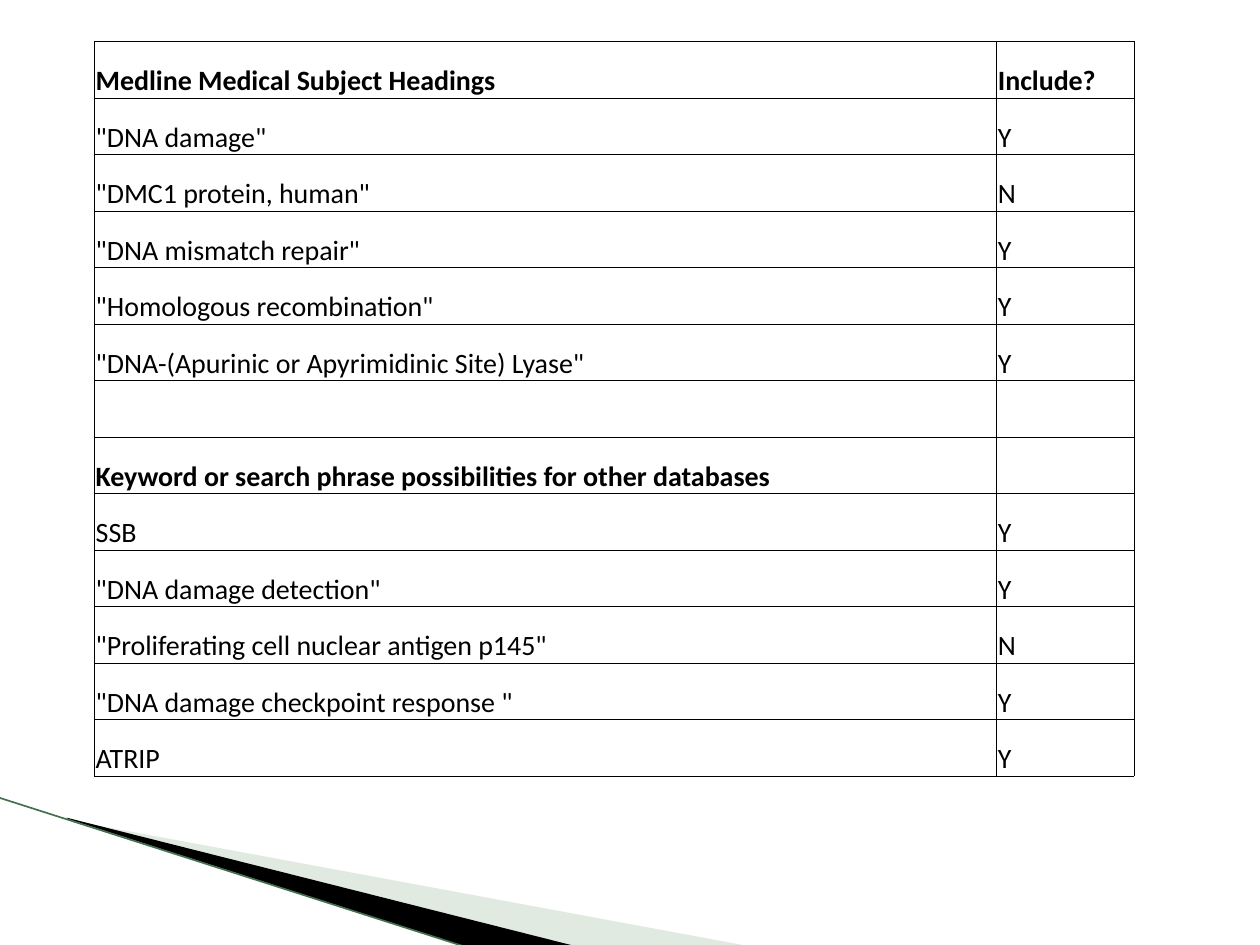
import pptx
import pptx.dml.color
import pptx.enum.shapes
import pptx.enum.text
import pptx.oxml
import pptx.oxml.ns
import pptx.util
from pptx.util import Inches

BLACK = pptx.dml.color.RGBColor(0x00, 0x00, 0x00)
PALE_GREEN = pptx.dml.color.RGBColor(0xB3, 0xCB, 0xB5)
DARK_GREEN = pptx.dml.color.RGBColor(0x44, 0x70, 0x4F)

ROW_HEIGHT = 5.83 / 13
COLUMN_WIDTHS = (7.16, 1.09)
HEADING_ROWS = (0, 7)
SEARCH_TERMS = [
    ("Medline Medical Subject Headings", "Include?"),
    ('"DNA damage"', "Y"),
    ('"DMC1 protein, human"', "N"),
    ('"DNA mismatch repair"', "Y"),
    ('"Homologous recombination"', "Y"),
    ('"DNA-(Apurinic or Apyrimidinic Site) Lyase"', "Y"),
    ("", ""),
    ("Keyword or search phrase possibilities for other databases", ""),
    ("SSB", "Y"),
    ('"DNA damage detection"', "Y"),
    ('"Proliferating cell nuclear antigen p145"', "N"),
    ('"DNA damage checkpoint response "', "Y"),
    ("ATRIP", "Y"),
]


def add_wedge(slide, points, color, opacity=100):
    """Draw a closed, unlined polygon; opacity is in percent."""
    corners = [(Inches(x), Inches(y)) for x, y in points]
    builder = slide.shapes.build_freeform(*corners[0])
    builder.add_line_segments(corners[1:], close=True)
    wedge = builder.convert_to_shape()
    wedge.shadow.inherit = False
    wedge.line.fill.background()
    wedge.fill.solid()
    wedge.fill.fore_color.rgb = color
    if opacity < 100:
        fill_color = wedge.fill._xPr.find(".//" + pptx.oxml.ns.qn("a:srgbClr"))
        alpha = pptx.oxml.parse_xml(
            f'<a:alpha {pptx.oxml.ns.nsdecls("a")} val="{opacity * 1000}"/>')
        fill_color.append(alpha)


def add_edge_line(slide, start, end):
    line = slide.shapes.add_connector(
        pptx.enum.shapes.MSO_CONNECTOR.STRAIGHT,
        *(Inches(value) for value in start + end))
    line.line.color.rgb = DARK_GREEN
    line.line.width = pptx.util.Pt(0.95)
    line._element.spPr.append(pptx.oxml.parse_xml(
        f'<a:effectLst {pptx.oxml.ns.nsdecls("a")}/>'))


def add_borders(cell):
    properties = cell._tc.get_or_add_tcPr()
    for side in ("lnL", "lnR", "lnT", "lnB"):
        properties.append(pptx.oxml.parse_xml(
            f'<a:{side} {pptx.oxml.ns.nsdecls("a")} w="{pptx.util.Pt(0.5)}">'
            f'<a:solidFill><a:srgbClr val="{BLACK}"/></a:solidFill></a:{side}>'))


def format_cell(cell, text, bold):
    add_borders(cell)
    cell.fill.background()
    cell.vertical_anchor = pptx.enum.text.MSO_ANCHOR.BOTTOM
    cell.margin_left = cell.margin_right = cell.margin_top = Inches(0.01)
    cell.margin_bottom = 0
    cell.text_frame.text = text
    font = cell.text_frame.paragraphs[0].font
    for target in [font] + [run.font for run in cell.text_frame.paragraphs[0].runs]:
        target.name = "Calibri"
        target.size = pptx.util.Pt(16)
        target.bold = bold
        target.color.rgb = BLACK


def add_search_table(slide):
    frame = slide.shapes.add_table(
        len(SEARCH_TERMS), len(COLUMN_WIDTHS), Inches(0.75), Inches(0.33),
        Inches(sum(COLUMN_WIDTHS)), Inches(ROW_HEIGHT * len(SEARCH_TERMS)))
    table = frame.table
    table.first_row = False
    table.horz_banding = False
    for column, width in zip(table.columns, COLUMN_WIDTHS):
        column.width = Inches(width)
    for row_index, terms in enumerate(SEARCH_TERMS):
        table.rows[row_index].height = Inches(ROW_HEIGHT)
        for column_index, text in enumerate(terms):
            format_cell(table.cell(row_index, column_index), text,
                        row_index in HEADING_ROWS)


def main():
    deck = pptx.Presentation()
    deck.slide_width = Inches(10)
    deck.slide_height = Inches(7.5)
    slide = deck.slides.add_slide(deck.slide_layouts[6])
    add_wedge(slide, [(0.55, 6.51), (5.95, 7.51), (4.56, 7.51), (0.55, 6.5)],
              PALE_GREEN, opacity=40)
    add_wedge(slide, [(0.53, 6.49), (4.57, 7.51), (3.72, 7.52), (0.54, 6.5)], BLACK)
    add_edge_line(slide, (-0.01, 6.33), (3.71, 7.52))
    add_search_table(slide)
    deck.save("out.pptx")


if __name__ == "__main__":
    main()
